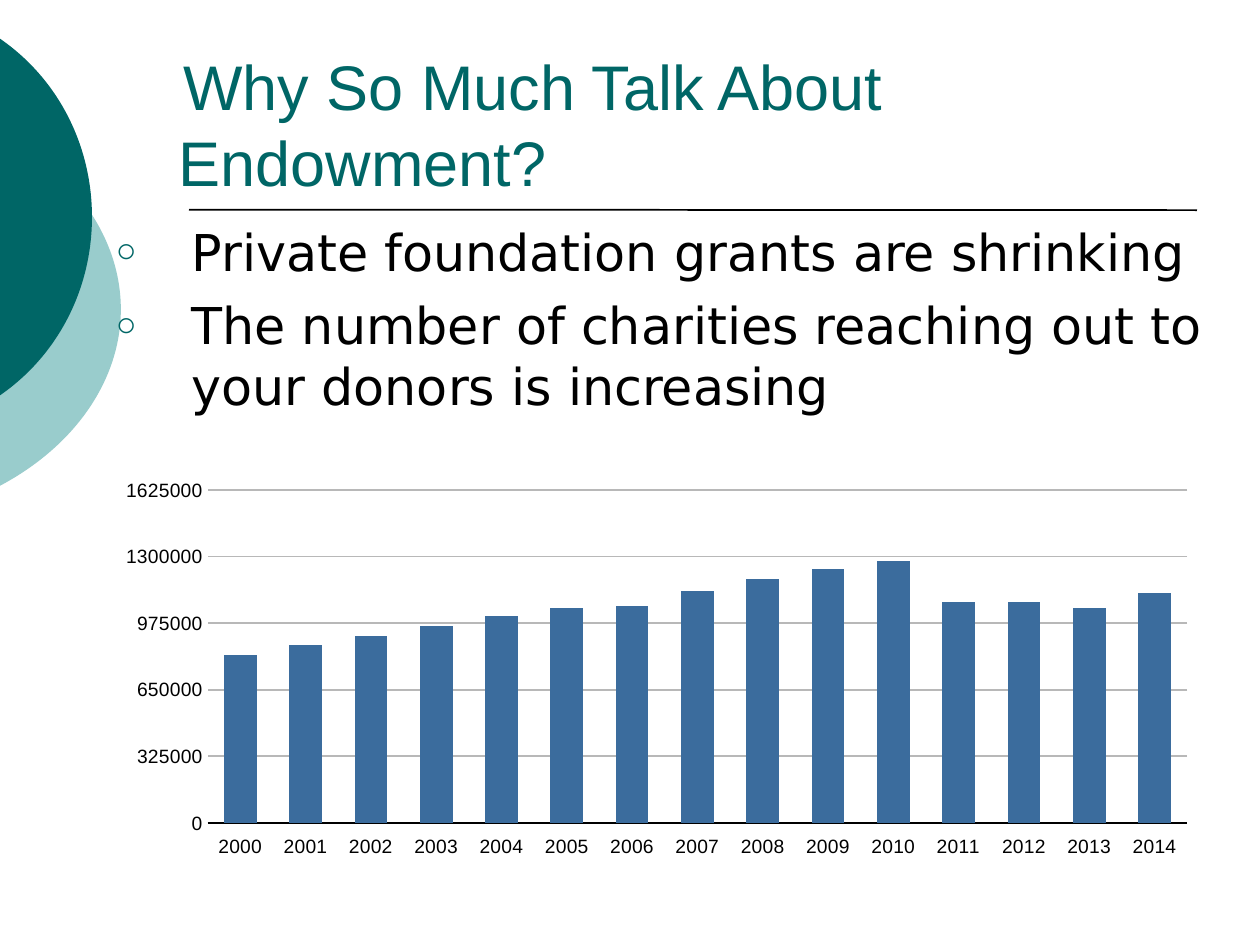
from lxml.etree import SubElement
from pptx import Presentation
from pptx.chart.data import CategoryChartData
from pptx.dml.color import RGBColor
from pptx.enum.chart import XL_CHART_TYPE as ChartType
from pptx.enum.chart import XL_TICK_LABEL_POSITION as LabelPosition
from pptx.enum.chart import XL_TICK_MARK as TickMark
from pptx.enum.shapes import MSO_CONNECTOR as Connector
from pptx.enum.text import MSO_ANCHOR as Anchor
from pptx.oxml import parse_xml
from pptx.oxml.ns import nsdecls, qn
from pptx.util import Pt

WHITE = RGBColor(0xFF, 0xFF, 0xFF)
BLACK = RGBColor(0x00, 0x00, 0x00)
TEAL = RGBColor(0x00, 0x66, 0x66)
PALE_TEAL = RGBColor(0x99, 0xCC, 0xCC)
BLUE = RGBColor(0x3B, 0x6C, 0x9D)
GRAY = RGBColor(0xB8, 0xB8, 0xB8)

YEARS = range(2000, 2015)
VALUES = [820000, 870000, 910000, 960000, 1010000, 1050000, 1060000, 1130000,
          1190000, 1240000, 1280000, 1080000, 1080000, 1050000, 1120000]


class SlideBuilder:
    heading_font = "Arial"
    body_font = "DejaVu Sans"

    def __init__(self, presentation):
        self.slide = presentation.slides.add_slide(presentation.slide_layouts[6])
        fill = self.slide.background.fill
        fill.solid()
        fill.fore_color.rgb = WHITE

    def disc_segment(self, upper_curve, color):
        """Fill a curve and its mirror image below the last control point."""
        middle = upper_curve[-1][1]
        lower_curve = [(x, 2 * middle - y) for x, y in reversed(upper_curve[:-1])]
        points = [(Pt(x), Pt(y)) for x, y in upper_curve + lower_curve]
        builder = self.slide.shapes.build_freeform(*points[0])
        builder.add_line_segments(points[1:], close=True)
        shape = builder.convert_to_shape()
        self.curve_segments(shape)
        shape.shadow.inherit = False
        shape.fill.solid()
        shape.fill.fore_color.rgb = color
        shape.line.fill.background()

    def curve_segments(self, shape):
        """Turn every three line segments into one cubic curve."""
        segments = list(shape._element.iter(qn("a:lnTo")))
        outline = segments[0].getparent()
        for start in range(0, len(segments), 3):
            curve = SubElement(outline, qn("a:cubicBezTo"))
            segments[start].addprevious(curve)
            for segment in segments[start:start + 3]:
                curve.append(segment[0])
                outline.remove(segment)

    def rule(self, start, end):
        line = self.slide.shapes.add_connector(
            Connector.STRAIGHT, *map(Pt, start + end))
        line.line.color.rgb = BLACK
        line.line.width = Pt(1)
        SubElement(line._element.spPr, qn("a:effectLst"))

    def text_frame(self, box, anchor):
        frame = self.slide.shapes.add_textbox(*map(Pt, box)).text_frame
        frame.word_wrap = True
        frame.vertical_anchor = anchor
        frame.margin_left = frame.margin_right = Pt(0)
        frame.margin_top = frame.margin_bottom = Pt(0)
        return frame

    def run(self, paragraph, text, size, font, color):
        run = paragraph.add_run()
        run.text = text
        run.font.size = Pt(size)
        run.font.name = font
        run.font.color.rgb = color

    def indent(self, paragraph, left, first):
        properties = paragraph._p.get_or_add_pPr()
        properties.set("marL", str(Pt(left)))
        properties.set("indent", str(Pt(first)))
        return properties

    def title(self, box, lines):
        paragraph = self.text_frame(box, Anchor.BOTTOM).paragraphs[0]
        self.indent(paragraph, 0, 2.6)
        for number, line in enumerate(lines):
            if number:
                paragraph.add_line_break()
            self.run(paragraph, line, 36, self.heading_font, TEAL)

    def bullets(self, box, items):
        frame = self.text_frame(box, Anchor.TOP)
        for number, item in enumerate(items):
            paragraph = frame.add_paragraph() if number else frame.paragraphs[0]
            paragraph.space_before = Pt(7)
            properties = self.indent(paragraph, 46.8, -43.2)
            color = SubElement(properties, qn("a:buClr"))
            SubElement(color, qn("a:srgbClr"), val=str(TEAL))
            SubElement(properties, qn("a:buSzPct"), val="68000")
            SubElement(properties, qn("a:buFont"), typeface=self.heading_font)
            SubElement(properties, qn("a:buChar"), char="○")
            self.run(paragraph, item, 29, self.body_font, BLACK)

    def axis(self, axis):
        axis.major_tick_mark = axis.minor_tick_mark = TickMark.NONE
        font = axis.tick_labels.font
        font.size = Pt(11)
        font.name = self.heading_font
        font.color.rgb = BLACK

    def column_chart(self, box, categories, name, values):
        data = CategoryChartData(number_format="0")
        data.categories = categories
        data.add_series(name, values)
        chart = self.slide.shapes.add_chart(
            ChartType.COLUMN_CLUSTERED, *map(Pt, box), data).chart
        chart.has_title = chart.has_legend = False
        chart.font.size = Pt(10)
        chart.font.name = "Cambria"
        chart.font.color.rgb = BLACK

        # Columns
        plot = chart.plots[0]
        plot.gap_width = 100
        plot.overlap = -10
        plot.vary_by_categories = False
        fill = plot.series[0].format.fill
        fill.solid()
        fill.fore_color.rgb = BLUE

        # Axes
        years = chart.category_axis
        self.axis(years)
        years.tick_label_position = LabelPosition.LOW
        years.format.line.color.rgb = BLACK
        years.format.line.width = Pt(1)
        scale = chart.value_axis
        self.axis(scale)
        scale.minimum_scale = 0
        scale.maximum_scale = 1625000
        scale.major_unit = 325000
        scale.tick_labels.number_format = "0"
        scale.tick_labels.number_format_is_linked = False
        scale.format.line.fill.background()
        scale.major_gridlines.format.line.color.rgb = GRAY
        scale.major_gridlines.format.line.width = Pt(1)

        # Inner plot area
        plot_area = chart._chartSpace.chart.plotArea
        for old_layout in plot_area.findall(qn("c:layout")):
            plot_area.remove(old_layout)
        plot_area.insert(0, parse_xml(
            f'<c:layout {nsdecls("c")}><c:manualLayout>'
            '<c:layoutTarget val="inner"/>'
            '<c:xMode val="edge"/><c:yMode val="edge"/>'
            '<c:x val="0.09"/><c:y val="0.053"/>'
            '<c:w val="0.91"/><c:h val="0.86"/>'
            '</c:manualLayout></c:layout>'))


def main():
    presentation = Presentation()
    presentation.slide_width = Pt(720)
    presentation.slide_height = Pt(540)
    builder = SlideBuilder(presentation)

    # Discs at the left edge and the rule below the title
    builder.disc_segment(
        [(-0.7, 75.6), (43.2, 98.6), (69.1, 136.8), (69.1, 176.8)], PALE_TEAL)
    builder.disc_segment(
        [(-0.7, 21.6), (33.1, 44.6), (52.6, 82.8), (52.6, 124)], TEAL)
    builder.rule((108, 119.8), (684, 120.1))

    # Title and points
    builder.title((102.2, 0, 588.2, 113.8), ["Why So Much Talk About", "Endowment?"])
    builder.bullets((62.6, 126, 625.7, 130.3), [
        "Private foundation grants are shrinking",
        "The number of charities reaching out to your donors is increasing"])

    # Chart by year
    builder.column_chart(
        (63.3, 268.3, 615.6, 221.8), map(str, YEARS), "Untitled 1", VALUES)

    presentation.save("out.pptx")


if __name__ == "__main__":
    main()
